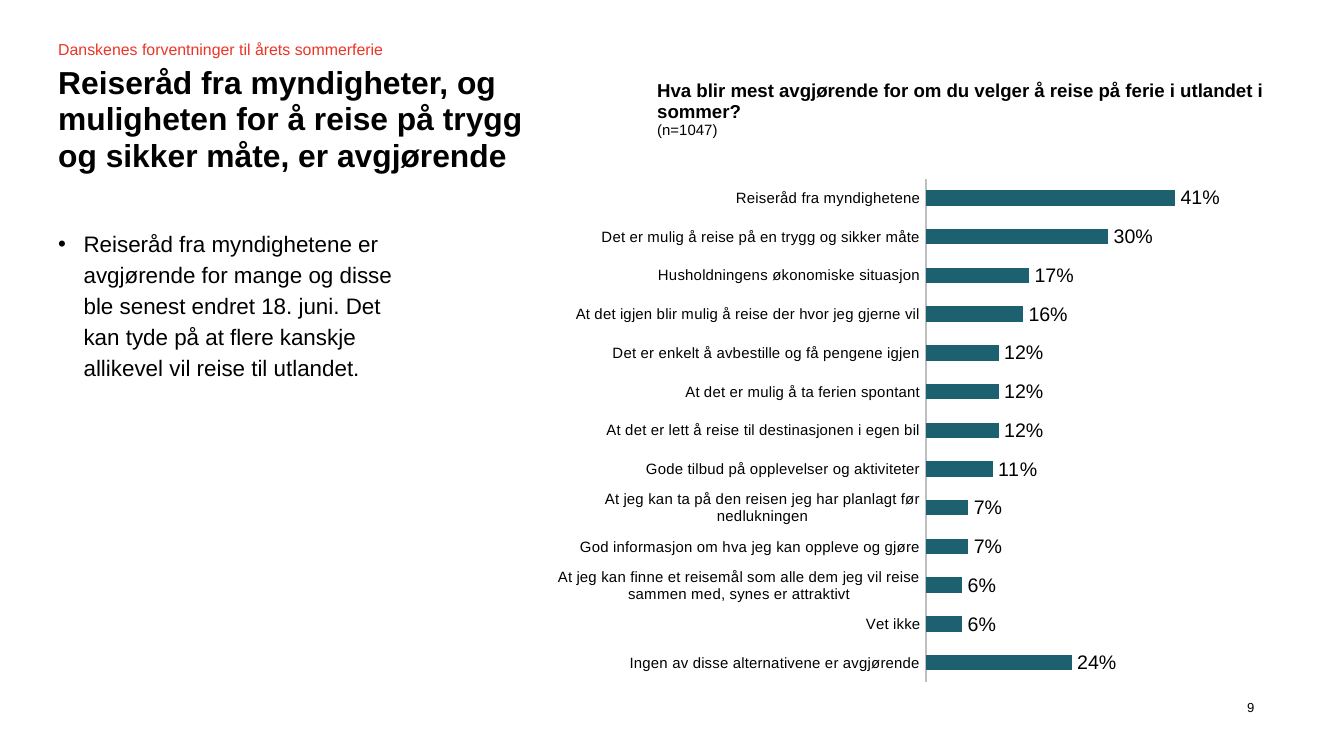
from lxml import etree
from pptx import Presentation
from pptx.chart.data import CategoryChartData
from pptx.dml.color import RGBColor
from pptx.enum.chart import XL_CHART_TYPE, XL_LABEL_POSITION, XL_TICK_MARK
from pptx.enum.text import MSO_ANCHOR, MSO_AUTO_SIZE, PP_ALIGN
from pptx.oxml import parse_xml
from pptx.oxml.ns import nsdecls, qn
from pptx.util import Cm, Pt

BAR_CLUSTERED = XL_CHART_TYPE.BAR_CLUSTERED
OUTSIDE_END = XL_LABEL_POSITION.OUTSIDE_END
NO_TICKS = XL_TICK_MARK.NONE
TOP = MSO_ANCHOR.TOP
NO_AUTOFIT = MSO_AUTO_SIZE.NONE
LEFT = PP_ALIGN.LEFT

FONT = "Arial"
COLORS = {"text": "000000", "accent": "ED3426", "bar": "1D6171",
          "axis": "BFBFBF", "white": "FFFFFF"}
PERCENT = "###0%"

# Answers from the top of the chart to the bottom
ANSWERS = [
    ("Reiseråd fra myndighetene", 0.41),
    ("Det er mulig å reise på en trygg og sikker måte", 0.30),
    ("Husholdningens økonomiske situasjon", 0.17),
    ("At det igjen blir mulig å reise der hvor jeg gjerne vil", 0.16),
    ("Det er enkelt å avbestille og få pengene igjen", 0.12),
    ("At det er mulig å ta ferien spontant", 0.12),
    ("At det er lett å reise til destinasjonen i egen bil", 0.12),
    ("Gode tilbud på opplevelser og aktiviteter", 0.11),
    ("At jeg kan ta på den reisen jeg har planlagt før nedlukningen", 0.07),
    ("God informasjon om hva jeg kan oppleve og gjøre", 0.07),
    ("At jeg kan finne et reisemål som alle dem jeg vil reise "
     "sammen med, synes er attraktivt", 0.06),
    ("Vet ikke", 0.06),
    ("Ingen av disse alternativene er avgjørende", 0.24),
]


def color(name):
    return RGBColor.from_string(COLORS[name])


def set_font(font, size, color_name="text", bold=False):
    font.name = FONT
    font.size = Pt(size)
    font.bold = bold
    font.color.rgb = color(color_name)


def fill_text(shape, text, box, size, color_name="text", bold=False, wrap=True):
    """Place a text shape without margins and return its paragraph."""
    shape.left, shape.top, shape.width, shape.height = (Cm(value) for value in box)
    frame = shape.text_frame
    frame.margin_left = frame.margin_top = frame.margin_right = frame.margin_bottom = 0
    frame.word_wrap = wrap
    frame.auto_size = NO_AUTOFIT
    frame.vertical_anchor = TOP
    frame.text = text
    paragraph = frame.paragraphs[0]
    paragraph.alignment = LEFT
    set_font(paragraph.font, size, color_name, bold)
    return paragraph


def add_label(slide, text, box, size, color_name="text"):
    shape = slide.shapes.add_textbox(0, 0, 0, 0)
    fill_text(shape, text, box, size, color_name, wrap=False)


def add_title(slide, text, box):
    title = slide.shapes.title
    paragraph = fill_text(title, text, box, 17, bold=True)
    paragraph.line_spacing = 0.95
    title.fill.solid()
    title.fill.fore_color.rgb = color("white")


def add_bullet(slide, text, box):
    paragraph = fill_text(slide.placeholders[1], text, box, 12)
    paragraph.line_spacing = 1.15
    paragraph.space_before = 0
    paragraph.space_after = Pt(2)
    properties = paragraph._p.get_or_add_pPr()
    properties.set("marL", str(Cm(0.48)))
    properties.set("indent", str(-Cm(0.48)))


def add_question_table(slide, question, base, box):
    frame = slide.shapes.add_table(1, 1, *(Cm(value) for value in box))
    cell = frame.table.cell(0, 0)
    cell.margin_left = cell.margin_top = cell.margin_right = 0
    cell.margin_bottom = Cm(0.2)
    cell.vertical_anchor = TOP
    cell.text = f"{question}\n{base}"
    for paragraph, size, bold in zip(cell.text_frame.paragraphs, (10, 8), (True, False)):
        set_font(paragraph.font, size, bold=bold)

    # Borders come before the fill in the cell properties
    properties = cell._tc.get_or_add_tcPr()
    for side in ("lnL", "lnR", "lnT", "lnB"):
        line = etree.SubElement(properties, qn(f"a:{side}"), w=str(Pt(1)))
        fill = etree.SubElement(line, qn("a:solidFill"))
        etree.SubElement(fill, qn("a:srgbClr"), val=COLORS["white"])
    cell.fill.background()


def set_plot_area(chart, x, y, width, height):
    """Fix the inner plot area as fractions of the chart."""
    plot_area = chart._chartSpace.chart.plotArea
    for layout in plot_area.findall(qn("c:layout")):
        plot_area.remove(layout)
    sizes = "".join(f'<c:{tag} val="{value}"/>' for tag, value in
                    (("x", x), ("y", y), ("w", width), ("h", height)))
    plot_area.insert(0, parse_xml(
        f'<c:layout {nsdecls("c")}><c:manualLayout><c:layoutTarget val="inner"/>'
        f'<c:xMode val="edge"/><c:yMode val="edge"/>{sizes}'
        '</c:manualLayout></c:layout>'))


def add_bar_chart(slide, answers, box):
    # Bar charts draw the first category at the bottom
    data = CategoryChartData(number_format=PERCENT)
    data.categories = [label for label, _ in reversed(answers)]
    data.add_series("Series 1", [share for _, share in reversed(answers)])
    chart = slide.shapes.add_chart(
        BAR_CLUSTERED, *(Cm(value) for value in box), data).chart
    chart.has_legend = False
    chart.has_title = False
    set_font(chart.font, 10)
    set_plot_area(chart, 0.5, 0.04, 0.47, 0.9)

    # Axes
    category_axis = chart.category_axis
    category_axis.major_tick_mark = NO_TICKS
    category_axis.minor_tick_mark = NO_TICKS
    category_axis.has_major_gridlines = False
    category_axis.format.line.color.rgb = color("axis")
    category_axis.format.line.width = Pt(0.75)
    set_font(category_axis.tick_labels.font, 8)
    value_axis = chart.value_axis
    value_axis.minimum_scale = 0
    value_axis.maximum_scale = 0.6
    value_axis.major_unit = 0.2
    value_axis.has_major_gridlines = False
    value_axis.tick_labels.number_format = PERCENT
    value_axis.tick_labels.number_format_is_linked = False
    value_axis.visible = False

    # Bars and their labels
    plot = chart.plots[0]
    plot.gap_width = 150
    plot.vary_by_categories = False
    series = plot.series[0]
    series.format.fill.solid()
    series.format.fill.fore_color.rgb = color("bar")
    labels = series.data_labels
    labels.show_value = True
    labels.number_format = PERCENT
    labels.number_format_is_linked = False
    labels.position = OUTSIDE_END
    set_font(labels.font, 10.5)


def main():
    presentation = Presentation()
    presentation.slide_width = Cm(25.4)
    presentation.slide_height = Cm(14.28)
    slide = presentation.slides.add_slide(presentation.slide_layouts[1])

    # Heading and comment
    add_label(slide, "Danskenes forventninger til årets sommerferie",
              (1.1, 0.74, 6.22, 0.36), 8.5, "accent")
    add_title(slide, "Reiseråd fra myndigheter, og muligheten for å reise på "
              "trygg og sikker måte, er avgjørende", (1.1, 1.24, 9.6, 2.08))
    add_bullet(slide, "Reiseråd fra myndighetene er avgjørende for mange og disse "
               "ble senest endret 18. juni. Det kan tyde på at flere kanskje "
               "allikevel vil reise til utlandet.", (1.1, 4.27, 6.78, 1.98))

    # Question and answers
    add_question_table(slide, "Hva blir mest avgjørende for om du velger å reise "
                       "på ferie i utlandet i sommer?", "(n=1047)",
                       (12.42, 1.52, 11.51, 1.4))
    add_bar_chart(slide, ANSWERS, (10.16, 2.95, 14.68, 10.57))

    # Page number
    add_label(slide, "9", (23.57, 13.21, 0.71, 0.3), 7)

    presentation.save("out.pptx")


if __name__ == "__main__":
    main()
